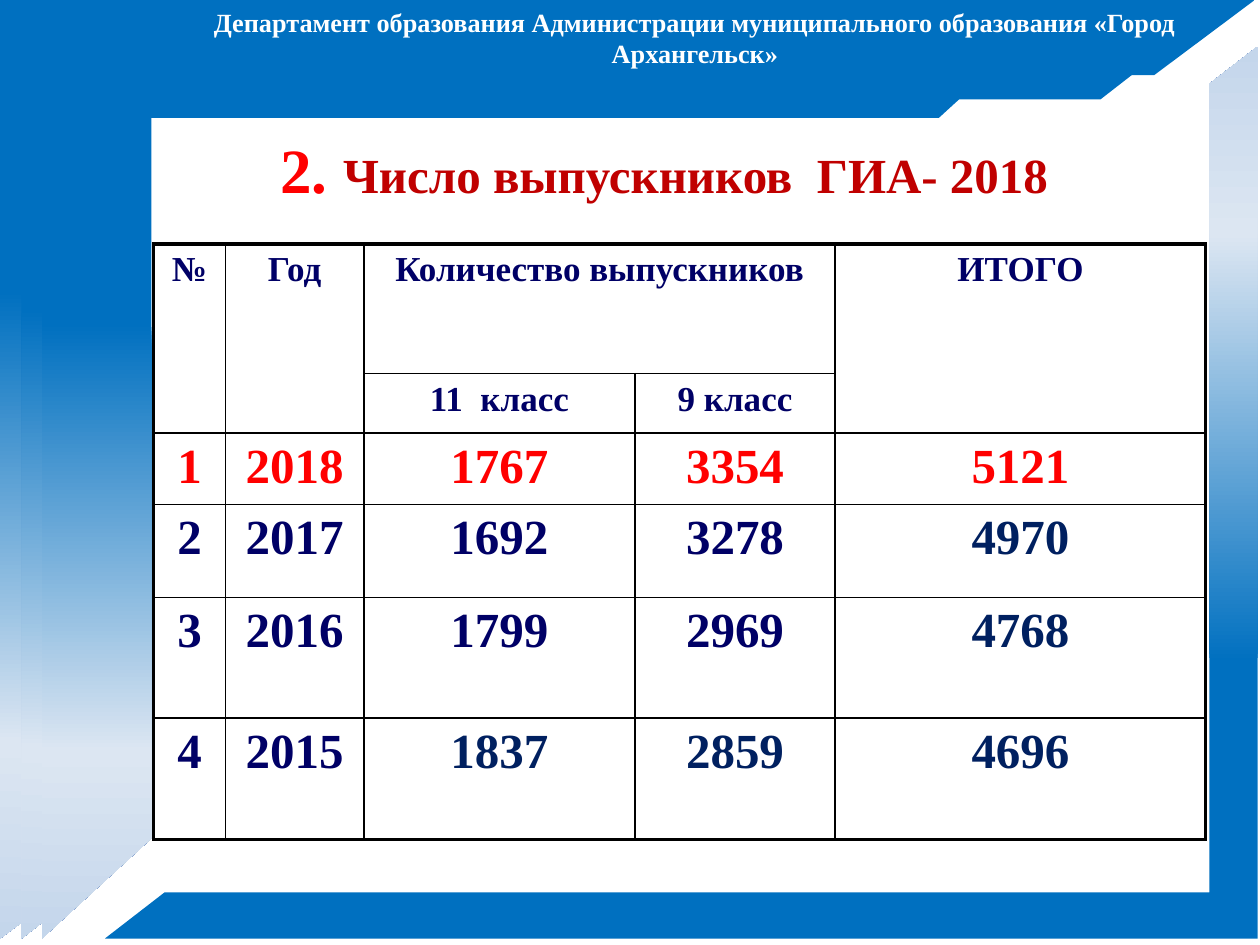
from lxml import etree
from pptx import Presentation
from pptx.dml.color import RGBColor
from pptx.enum.shapes import MSO_SHAPE
from pptx.enum.text import MSO_ANCHOR, PP_ALIGN
from pptx.oxml.ns import qn
from pptx.util import Pt

FRAME = MSO_SHAPE.HALF_FRAME
CENTER = PP_ALIGN.CENTER
TOP = MSO_ANCHOR.TOP
RED, NAVY, DARK = "FF0000", "000066", "002060"


def paint(code):
    return RGBColor.from_string(code)


def write(frame, text, size=20, color=NAVY):
    para = frame.paragraphs[0]
    para.alignment = CENTER
    run = para.add_run()
    run.text = text
    run.font.name = "Times New Roman"
    run.font.size = Pt(size)
    run.font.bold = True
    run.font.color.rgb = paint(color)


deck = Presentation()
deck.slide_width, deck.slide_height = Pt(720), Pt(540)
slide = deck.slides.add_slide(deck.slide_layouts[6])
shapes = slide.shapes

stops = [(31, "0070C0"), (79, "DCE6F2"), (100, "C4D6EB"), (100, "FFEBFA")]
frames = [
    (0, 0, 717, 536.4, 0.08, 0.16, 0),
    (12.2, 15.1, 670.3, 521.3, 0.08, 0.112, 0),
    (23.8, 26.6, 557.3, 509.8, 0.08, 0.123, 0),
    (59.8, 26.6, 658.8, 509.8, 0.052, 0.054, 180),
]
for left, top, width, height, bar, side, turn in frames:
    shape = shapes.add_shape(FRAME, Pt(left), Pt(top), Pt(width), Pt(height))
    shape.shadow.inherit = False
    shape.adjustments[0] = bar
    shape.adjustments[1] = side
    shape.rotation = turn
    shape.line.fill.background()
    shape.fill.gradient()
    shape.fill.gradient_angle = 270
    blend = shape._element.spPr.find(qn("a:gradFill")).find(qn("a:gsLst"))
    for old in list(blend):
        blend.remove(old)
    for place, code in stops:
        stop = etree.SubElement(blend, qn("a:gs"), pos=str(place * 1000))
        etree.SubElement(stop, qn("a:srgbClr"), val=code)

labels = [
    (68.4, 0, 657.4, 25.2, [("Департамент образования Администрации муниципального образования «Город Архангельск»", 15, "FFFFFF")]),
    (55.4, 71.3, 648, 23, [("2. ", 36, RED), ("Число выпускников  ГИА- 2018", 28, "C00000")]),
]
for left, top, width, height, runs in labels:
    frame = shapes.add_textbox(Pt(left), Pt(top), Pt(width), Pt(height)).text_frame
    frame.word_wrap = True
    frame.vertical_anchor = TOP
    for text, size, color in runs:
        write(frame, text, size=size, color=color)

cols = [41, 79.2, 154.8, 114.5, 211.7]
rows = [74, 34, 39.5, 53, 69, 69.5]
table = shapes.add_table(len(rows), len(cols), Pt(87.8), Pt(139.5), Pt(sum(cols)), Pt(sum(rows))).table
table.first_row = False
table.horz_banding = False
for col, width in zip(table.columns, cols):
    col.width = Pt(width)
for row, height in zip(table.rows, rows):
    row.height = Pt(height)

for y in range(len(rows)):
    for x in range(len(cols)):
        cell = table.cell(y, x)
        props = cell._tc.get_or_add_tcPr()
        edges = {"L": x == 0, "R": x == len(cols) - 1, "T": y == 0, "B": y == len(rows) - 1}
        for edge, outer in edges.items():
            line = etree.SubElement(props, qn("a:ln" + edge), w=str(Pt(2.25 if outer else 1)))
            fill = etree.SubElement(line, qn("a:solidFill"))
            etree.SubElement(fill, qn("a:srgbClr"), val="000000")
        cell.fill.background()

for y, x, end_y, end_x in [(0, 0, 1, 0), (0, 1, 1, 1), (0, 2, 0, 3), (0, 4, 1, 4)]:
    table.cell(y, x).merge(table.cell(end_y, end_x))

heads = [
    (0, 0, "№"), (0, 1, "Год"), (0, 2, "Количество выпускников"),
    (0, 4, "ИТОГО"), (1, 2, "11  класс"), (1, 3, "9 класс"),
]
for y, x, text in heads:
    write(table.cell(y, x).text_frame, text)

data = [
    (["1", "2018", "1767", "3354", "5121"], [RED] * 5),
    (["2", "2017", "1692", "3278", "4970"], [NAVY] * 4 + [DARK]),
    (["3", "2016", "1799", "2969", "4768"], [NAVY] * 4 + [DARK]),
    (["4", "2015", "1837", "2859", "4696"], [NAVY] * 2 + [DARK] * 3),
]
for y, (texts, colors) in enumerate(data, 2):
    for x, (text, color) in enumerate(zip(texts, colors)):
        write(table.cell(y, x).text_frame, text, size=28, color=color)

deck.save("out.pptx")
